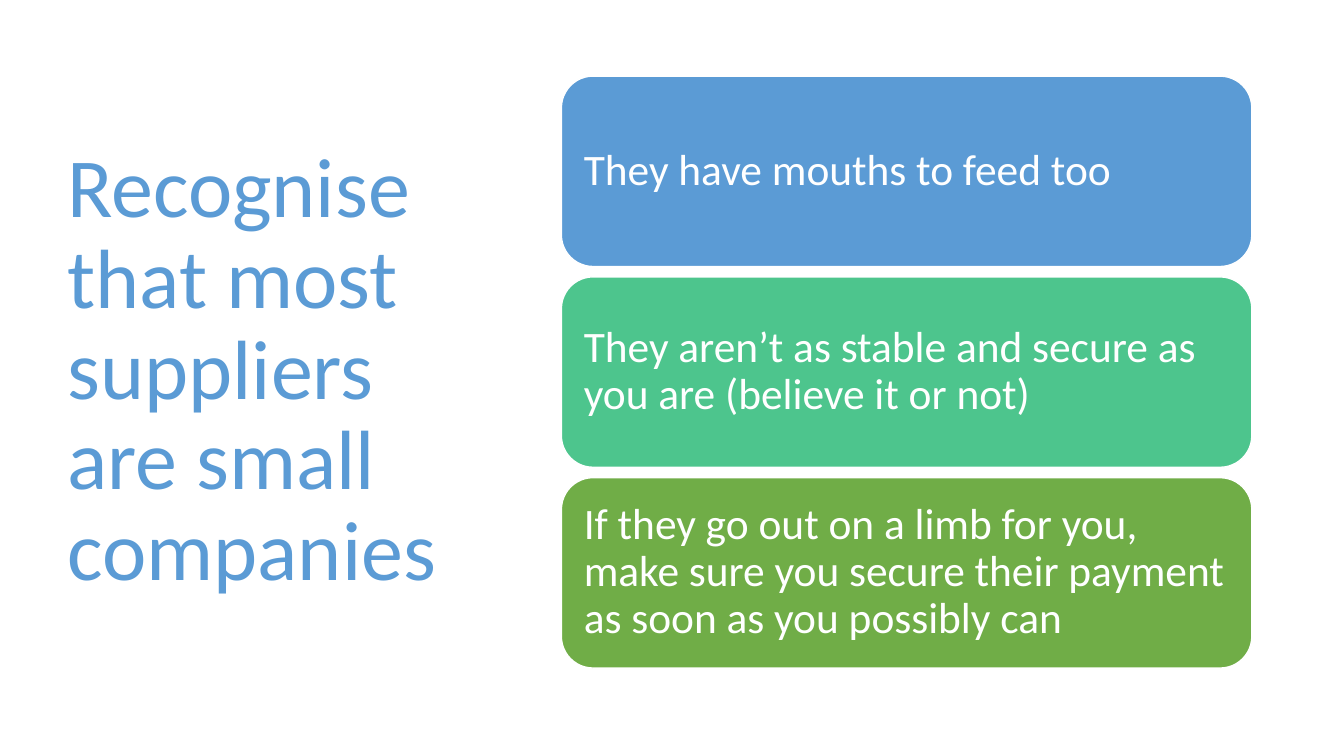
from dataclasses import dataclass

from pptx import Presentation
from pptx.dml.color import RGBColor
from pptx.enum.shapes import MSO_SHAPE
from pptx.enum.text import MSO_ANCHOR, MSO_AUTO_SIZE, PP_ALIGN
from pptx.shapes.autoshape import Shape
from pptx.slide import Slide
from pptx.text.text import TextFrame
from pptx.util import Pt

ROUNDED = MSO_SHAPE.ROUNDED_RECTANGLE
MIDDLE = MSO_ANCHOR.MIDDLE
NO_FIT = MSO_AUTO_SIZE.NONE
LEFT = PP_ALIGN.LEFT
TITLE_ONLY = 5


@dataclass(frozen=True)
class Theme:
    font: str = "Calibri"
    title_size: float = 60
    card_size: float = 31
    line_spacing: float = 0.9
    blue: str = "5B9BD5"
    mint: str = "4DC58D"
    green: str = "70AD47"
    white: str = "FFFFFF"


@dataclass(frozen=True)
class Frame:
    left: float
    top: float
    width: float
    height: float


@dataclass(frozen=True)
class Card:
    text: str
    color: str


THEME = Theme()
TITLE = "Recognise that most suppliers are small companies"
TITLE_FRAME = Frame(41, 49, 299.5, 433.4)
FIRST_CARD = Frame(401, 54.4, 493.2, 136)
CARD_PITCH = 143.4
CARD_INSET = 9.4
CARDS = [
    Card("They have mouths to feed too", THEME.blue),
    Card("They aren’t as stable and secure as you are (believe it or not)", THEME.mint),
    Card(
        "If they go out on a limb for you, make sure you secure their payment "
        "as soon as you possibly can",
        THEME.green,
    ),
]


def write_text(text_frame: TextFrame, text: str, size: float, color: str) -> None:
    text_frame.word_wrap = True
    text_frame.auto_size = NO_FIT
    text_frame.vertical_anchor = MIDDLE
    para = text_frame.paragraphs[0]
    para.alignment = LEFT
    para.line_spacing = THEME.line_spacing
    span = para.add_run()
    span.text = text
    span.font.name = THEME.font
    span.font.size = Pt(size)
    span.font.color.rgb = RGBColor.from_string(color)


def place_title(page: Slide, text: str, frame: Frame) -> None:
    title = page.shapes.title
    title.left, title.top = Pt(frame.left), Pt(frame.top)
    title.width, title.height = Pt(frame.width), Pt(frame.height)
    write_text(title.text_frame, text, THEME.title_size, THEME.blue)


def add_card(page: Slide, card: Card, frame: Frame) -> Shape:
    box = page.shapes.add_shape(
        ROUNDED, Pt(frame.left), Pt(frame.top), Pt(frame.width), Pt(frame.height)
    )
    box.shadow.inherit = False
    box.fill.solid()
    box.fill.fore_color.rgb = RGBColor.from_string(card.color)
    box.line.color.rgb = RGBColor.from_string(THEME.white)
    box.line.width = Pt(1)
    text_frame = box.text_frame
    text_frame.margin_left = text_frame.margin_right = Pt(CARD_INSET)
    text_frame.margin_top = text_frame.margin_bottom = Pt(CARD_INSET)
    write_text(text_frame, card.text, THEME.card_size, THEME.white)
    return box


def main() -> None:
    deck = Presentation()
    deck.slide_width, deck.slide_height = Pt(960), Pt(540)
    page = deck.slides.add_slide(deck.slide_layouts[TITLE_ONLY])
    place_title(page, TITLE, TITLE_FRAME)
    for index, card in enumerate(CARDS):
        top = FIRST_CARD.top + index * CARD_PITCH
        add_card(page, card, Frame(FIRST_CARD.left, top, FIRST_CARD.width, FIRST_CARD.height))
    deck.save("out.pptx")


if __name__ == "__main__":
    main()
